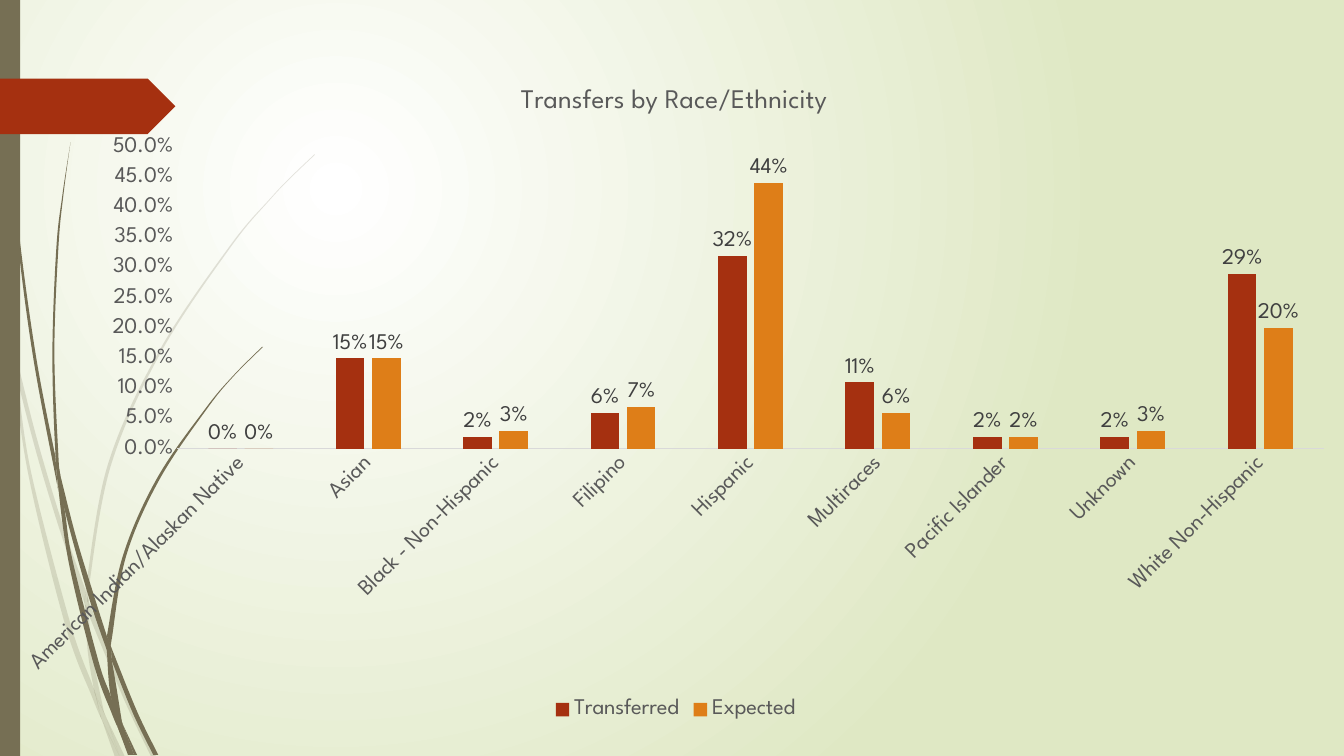
from lxml import etree
from pptx import Presentation
from pptx.chart.data import CategoryChartData
from pptx.dml.color import RGBColor
from pptx.enum.chart import XL_CHART_TYPE, XL_LABEL_POSITION, XL_LEGEND_POSITION, XL_TICK_MARK
from pptx.enum.shapes import MSO_SHAPE
from pptx.oxml import parse_xml
from pptx.oxml.ns import nsdecls, qn
from pptx.util import Inches, Pt

COLUMNS = XL_CHART_TYPE.COLUMN_CLUSTERED
OUTSIDE = XL_LABEL_POSITION.OUTSIDE_END
BOTTOM = XL_LEGEND_POSITION.BOTTOM
NO_TICK = XL_TICK_MARK.NONE
RECTANGLE, PENTAGON = MSO_SHAPE.RECTANGLE, MSO_SHAPE.PENTAGON

OLIVE = RGBColor(0x76, 0x6F, 0x54)
RUST = RGBColor(0xA5, 0x30, 0x10)
ORANGE = RGBColor(0xDE, 0x7E, 0x18)
WHITE = RGBColor(0xFF, 0xFF, 0xFF)
PALE_GREEN = RGBColor(0xDF, 0xE8, 0xC4)
AXIS_GRAY = RGBColor(0xD9, 0xD9, 0xD9)
TEXT_GRAY = RGBColor(0x59, 0x59, 0x59)
LABEL_GRAY = RGBColor(0x40, 0x40, 0x40)
FONT = "League Spartan"

WIDTH, HEIGHT = 13.33, 7.5
TITLE = "Transfers by Race/Ethnicity"
CATEGORIES = ["American Indian/Alaskan Native", "Asian", "Black - Non-Hispanic", "Filipino",
              "Hispanic", "Multiraces", "Pacific Islander", "Unknown", "White Non-Hispanic"]
SERIES = [
    ("Transferred", RUST, [0, 0.15, 0.02, 0.06, 0.32, 0.11, 0.02, 0.02, 0.29]),
    ("Expected", ORANGE, [0, 0.15, 0.03, 0.07, 0.44, 0.06, 0.02, 0.03, 0.2]),
]

PALE_BLADES = [
    ([(0, 2.99), (0.1, 3.44), (0.11, 3.5)], [(0, 2.82), (0.09, 3.22), (0.11, 3.5)]),
    ([(0.17, 3.76), (0.36, 4.49), (0.58, 5.22), (0.84, 5.99)],
     [(0.14, 3.45), (0.36, 4.33), (0.62, 5.2), (0.85, 5.86)]),
    ([(0.88, 6.1), (1.23, 6.94), (1.5, 7.51)], [(0.88, 5.96), (0.92, 6.07), (1.27, 6.92), (1.55, 7.51)]),
    ([(1.05, 7.11), (1.19, 7.51)], [(1.05, 7.11), (1.24, 7.51)]),
    ([(0.11, 3.5), (0.28, 4.7), (0.65, 6.21), (0.92, 6.93), (1.01, 7.14)],
     [(0.11, 3.5), (0.17, 3.76), (0.31, 4.69), (0.7, 6.19), (0.93, 6.83), (0.99, 7.07)]),
    ([(0.84, 5.99), (0.87, 6.46), (0.93, 6.83), (0.96, 6.92), (1.05, 7.11)],
     [(0.84, 5.99), (0.88, 6.1), (0.91, 6.46), (1.03, 7.06)]),
    ([(3.12, 1.53), (2.89, 1.75), (2.68, 1.97), (2.28, 2.44), (1.58, 3.48), (1.07, 4.61), (0.85, 5.84)],
     [(3.12, 1.54), (2.9, 1.75), (2.68, 1.98), (2.29, 2.45), (1.6, 3.49), (1.1, 4.62), (0.88, 5.84),
      (0.88, 5.96)]),
    ([(1.01, 7.14), (1.14, 7.51)], [(1.01, 7.14), (1.19, 7.51)]),
    ([(0.85, 5.86), (0.84, 5.99), (0.88, 6.08)], [(0.85, 5.86), (0.88, 5.96), (0.88, 6.1)]),
    ([(0.93, 6.83), (0.99, 7.07), (1.01, 7.14), (1.19, 7.51)],
     [(0.93, 6.83), (0.96, 6.92), (1.05, 7.11), (1.19, 7.51)]),
]
DARK_BLADES = [
    ([(0.03, 0), (0.04, 0.48), (0.07, 1.1), (0.17, 2.33), (0.33, 3.55), (0.56, 4.77), (0.57, 4.81)],
     [(0.04, 0), (0.05, 0.48), (0.08, 1.09), (0.19, 2.32), (0.36, 3.55), (0.55, 4.53)]),
    ([(0.6, 4.72), (0.64, 5.05), (0.88, 5.92), (1.06, 6.45)],
     [(0.6, 4.72), (0.75, 5.31), (0.93, 5.9), (1.06, 6.31)]),
    ([(1.11, 6.56), (1.32, 7.08), (1.52, 7.49)], [(1.1, 6.41), (1.13, 6.49), (1.36, 7.06), (1.57, 7.49)]),
    ([(0.57, 4.77), (0.68, 5.57), (0.93, 6.59), (1.11, 7.08), (1.17, 7.22)],
     [(0.57, 4.77), (0.64, 5.05), (0.72, 5.56), (0.98, 6.57), (1.1, 6.91), (1.16, 7.17)]),
    ([(0.7, 1.41), (0.62, 1.93), (0.56, 2.45), (0.52, 3.49), (0.55, 4.49), (0.6, 4.72)],
     [(0.7, 1.41), (0.63, 1.93), (0.58, 2.45), (0.54, 3.49), (0.58, 4.53), (0.6, 4.72)]),
    ([(1.22, 7.19), (1.33, 7.49)], [(1.22, 7.19), (1.36, 7.49)]),
    ([(0.55, 4.49), (0.57, 4.77), (0.64, 5.05)], [(0.55, 4.49), (0.6, 4.72), (0.64, 5.05)]),
    ([(2.6, 3.44), (2.31, 3.73), (2.04, 4.05), (1.56, 4.74), (1.22, 5.51), (1.06, 6.31)],
     [(2.61, 3.44), (2.31, 3.74), (2.05, 4.06), (1.58, 4.76), (1.25, 5.52), (1.11, 6.33), (1.1, 6.41)]),
    ([(1.17, 7.22), (1.27, 7.49)], [(1.17, 7.22), (1.31, 7.49)]),
    ([(1.06, 6.45), (1.1, 6.91), (1.22, 7.19)], [(1.06, 6.45), (1.11, 6.56), (1.21, 7.16)]),
    ([(1.06, 6.31), (1.06, 6.45), (1.11, 6.56)], [(1.06, 6.31), (1.1, 6.41), (1.11, 6.56)]),
    ([(1.1, 6.91), (1.17, 7.22), (1.3, 7.49)], [(1.1, 6.91), (1.16, 7.06), (1.22, 7.19), (1.33, 7.49)]),
]
UNITS = 1000


def curve_controls(points):
    padded = [points[0], *points, points[-1]]
    controls = []
    for before, start, end, after in zip(padded, padded[1:], padded[2:], padded[3:]):
        controls += [tuple(b + (c - a) / 6 for a, b, c in zip(before, start, end)),
                     tuple(c - (d - b) / 6 for b, c, d in zip(start, end, after)), end]
    return controls


def paint(shape, color, opacity=100):
    shape.shadow.inherit = False
    shape.line.fill.background()
    shape.fill.solid()
    shape.fill.fore_color.rgb = color
    if opacity < 100:
        tint = shape.fill._xPr.find(qn("a:solidFill"))[0]
        etree.SubElement(tint, qn("a:alpha")).set("val", str(opacity * 1000))


def add_blade(slide, left_edge, right_edge, opacity):
    tip, foot = left_edge[0], right_edge[-1]
    controls = curve_controls(left_edge) + [foot] * 3 + curve_controls(right_edge[::-1])
    start, *rest = [tuple(round(UNITS * value) for value in point) for point in [tip] + controls]
    builder = slide.shapes.build_freeform(*start, scale=Inches(1) / UNITS)
    builder.add_line_segments(rest, close=True)
    shape = builder.convert_to_shape()
    lines = list(shape.element.iter(qn("a:lnTo")))
    for first in range(0, len(lines) - 2, 3):
        curve = etree.Element(qn("a:cubicBezTo"))
        lines[first].addprevious(curve)
        for line in lines[first:first + 3]:
            curve.append(line[0])
            line.getparent().remove(line)
    paint(shape, OLIVE, opacity)


def add_block(slide, kind, color, *box):
    paint(slide.shapes.add_shape(kind, *map(Inches, box)), color)


def set_background(slide):
    fill = slide.background.fill
    fill.gradient()
    for stop, color in zip(fill.gradient_stops, (WHITE, PALE_GREEN)):
        stop.color.rgb = color
    gradient = fill._xPr.find(qn("a:gradFill"))
    gradient.replace(gradient.find(qn("a:lin")), parse_xml(
        f'<a:path {nsdecls("a")} path="circle">'
        '<a:fillToRect l="50000" t="50000" r="100000" b="100000"/></a:path>'))


def style(font, color, size=16):
    font.name, font.size, font.bold = FONT, Pt(size), False
    font.color.rgb = color


def set_layout(parent, index, target="", **shares):
    for existing in parent.findall(qn("c:layout")):
        parent.remove(existing)
    parts = [target] + [f'<c:{axis}Mode val="edge"/>' for axis in "xy"]
    parts += [f'<c:{name} val="{share}"/>' for name, share in shares.items()]
    parent.insert(index, parse_xml(f'<c:layout {nsdecls("c")}><c:manualLayout>'
                                   f'{"".join(parts)}</c:manualLayout></c:layout>'))


def add_transfer_chart(slide):
    data = CategoryChartData(number_format="0%")
    data.categories = CATEGORIES
    for name, _, values in SERIES:
        data.add_series(name, values)
    chart = slide.shapes.add_chart(COLUMNS, *map(Inches, (0, 0.63, 13.4, 6.56)), data).chart
    style(chart.font, TEXT_GRAY)
    run = chart.chart_title.text_frame.paragraphs[0].add_run()
    run.text = TITLE
    style(run.font, TEXT_GRAY, 19.2)
    chart.has_legend = True
    chart.legend.position, chart.legend.include_in_layout = BOTTOM, False
    style(chart.legend.font, TEXT_GRAY)

    category_axis, value_axis = chart.category_axis, chart.value_axis
    for axis in (category_axis, value_axis):
        axis.major_tick_mark = axis.minor_tick_mark = NO_TICK
        axis.has_major_gridlines = False
        style(axis.tick_labels.font, TEXT_GRAY)
    category_axis.format.line.color.rgb = AXIS_GRAY
    category_axis.format.line.width = Pt(0.75)
    value_axis.format.line.fill.background()
    value_axis.minimum_scale, value_axis.maximum_scale, value_axis.major_unit = 0, 0.5, 0.05
    value_axis.tick_labels.number_format = "0.0%"
    value_axis.tick_labels.number_format_is_linked = False

    plot = chart.plots[0]
    plot.gap_width, plot.overlap, plot.vary_by_categories = 219, -27, False
    for series, (_, color, _) in zip(plot.series, SERIES):
        series.format.fill.solid()
        series.format.fill.fore_color.rgb = color
        labels = series.data_labels
        labels.show_value, labels.position = True, OUTSIDE
        labels.number_format, labels.number_format_is_linked = "0%", False
        style(labels.font, LABEL_GRAY)

    root = chart.element
    root.find(".//" + qn("c:catAx")).find(".//" + qn("a:bodyPr")).set("rot", "-2700000")
    set_layout(root.find(".//" + qn("c:title")), 1, x=0.382, y=0.027)
    set_layout(root.find(".//" + qn("c:plotArea")), 0, '<c:layoutTarget val="inner"/>',
               x=0.131, y=0.126, w=0.849, h=0.457)


presentation = Presentation()
presentation.slide_width, presentation.slide_height = Inches(WIDTH), Inches(HEIGHT)
slide = presentation.slides.add_slide(presentation.slide_layouts[6])
set_background(slide)
for blades, opacity in ((PALE_BLADES, 20), (DARK_BLADES, 100)):
    for left_edge, right_edge in blades:
        add_blade(slide, left_edge, right_edge, opacity)
add_block(slide, RECTANGLE, OLIVE, 0, 0, 0.2, HEIGHT)
add_block(slide, PENTAGON, RUST, 0, 0.78, 1.74, 0.55)
add_transfer_chart(slide)
presentation.save("out.pptx")
